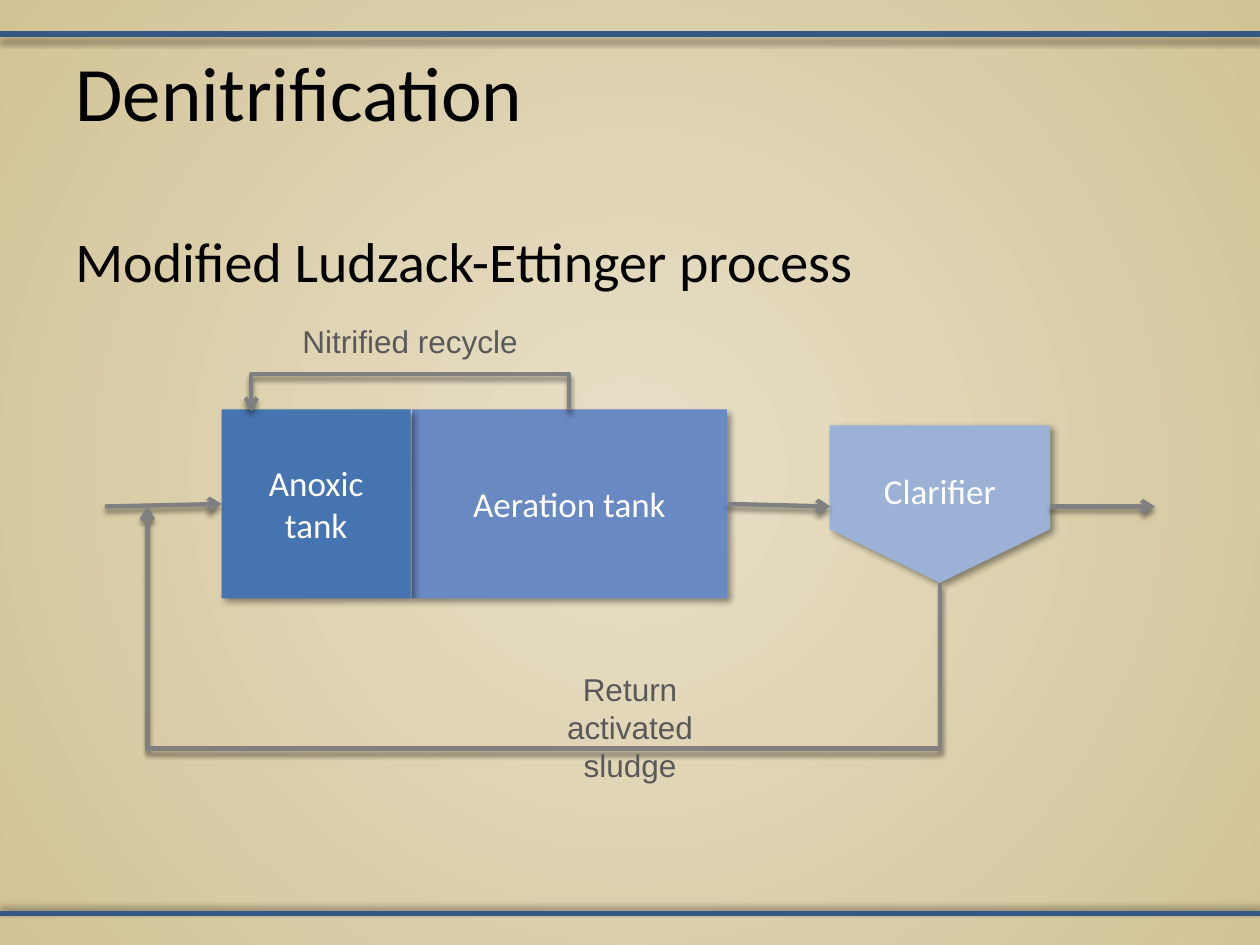
from lxml.etree import SubElement
from pptx import Presentation
from pptx.dml.color import RGBColor
from pptx.enum.shapes import MSO_CONNECTOR as CONN, MSO_SHAPE as SHAPE
from pptx.enum.text import MSO_ANCHOR, MSO_AUTO_SIZE, PP_ALIGN
from pptx.oxml.ns import qn
from pptx.util import Inches, Pt

BLACK = RGBColor(0x00, 0x00, 0x00)
WHITE = RGBColor(0xFF, 0xFF, 0xFF)
GREY = RGBColor(0x80, 0x80, 0x80)
LABEL = RGBColor(0x59, 0x59, 0x59)
RULE = RGBColor(0x35, 0x57, 0x84)
ANOXIC = RGBColor(0x46, 0x74, 0xB0)
AERATION = RGBColor(0x69, 0x89, 0xC2)
CLARIFIER = RGBColor(0x9B, 0xB1, 0xD6)
SAND = RGBColor(0xE8, 0xE0, 0xC8)
DARK_SAND = RGBColor(0xD2, 0xC3, 0x96)

prs = Presentation()
prs.slide_width, prs.slide_height = Inches(10), Inches(7.5)
W, H = prs.slide_width, prs.slide_height


def pct(*shares):
    """Turn alternating x and y percentages of the slide into lengths."""
    return [round(v * (H if i % 2 else W) / 100) for i, v in enumerate(shares)]


def add_shadow(sp, opacity, blur, dist, angle):
    """Append a black outer shadow; fill and line must be set already."""
    effects = SubElement(sp.element.spPr, qn("a:effectLst"))
    shadow = SubElement(effects, qn("a:outerShdw"), blurRad=str(Pt(blur)),
                        dist=str(Pt(dist)), dir=str(angle * 60000),
                        rotWithShape="0")
    color = SubElement(shadow, qn("a:srgbClr"), val="000000")
    SubElement(color, qn("a:alpha"), val=str(opacity * 1000))


s = prs.slides.add_slide(prs.slide_layouts[5])

# Radial background
fill = s.background.fill
fill.gradient()
for stop, color, position in zip(fill.gradient_stops, (SAND, DARK_SAND), (0, 1)):
    stop.color.rgb = color
    stop.position = position
grad = next(s.element.iter(qn("a:gradFill")))
grad.remove(grad.find(qn("a:lin")))
radial = SubElement(grad, qn("a:path"), path="circle")
SubElement(radial, qn("a:fillToRect"), l="50000", t="50000", r="50000", b="50000")

# Rules at the top and bottom
for y, angle in ((3.6, 90), (96.67, 270)):
    rule = s.shapes.add_connector(CONN.STRAIGHT, *pct(0, y, 100, y))
    rule.line.color.rgb = RULE
    rule.line.width = Pt(3)
    add_shadow(rule, 40, 4, 3, angle)

# Title and subtitle
title = s.shapes.title
subtitle = s.shapes.add_textbox(0, 0, 0, 0)
for sp, text, size, area in (
    (title, "Denitrification", 44, (5, 4, 90, 16.67)),
    (subtitle, "Modified Ludzack-Ettinger process", 32, (5, 23.33, 90, 12.27)),
):
    sp.left, sp.top, sp.width, sp.height = pct(*area)
    tf = sp.text_frame
    tf.text = text
    tf.word_wrap = True
    tf.vertical_anchor = MSO_ANCHOR.TOP
    p = tf.paragraphs[0]
    p.alignment = PP_ALIGN.LEFT
    p.font.name, p.font.size = "Calibri", Pt(size)
    p.font.color.rgb = BLACK

# Tanks; the clarifier is a pentagon turned to point down
for text, kind, color, area, turn in (
    ("Aeration tank", SHAPE.RECTANGLE, AERATION, (32.7, 43.33, 25, 20), 0),
    ("Anoxic tank", SHAPE.RECTANGLE, ANOXIC, (17.6, 43.33, 15, 20), 0),
    ("Clarifier", SHAPE.PENTAGON, CLARIFIER, (68.34, 41.67, 12.5, 23.33), 90),
):
    tank = s.shapes.add_shape(kind, *pct(*area))
    tank.fill.solid()
    tank.fill.fore_color.rgb = color
    tank.line.fill.background()
    add_shadow(tank, 40, 4, 3, 45)
    tf = tank.text_frame
    tf.text = text
    tf.word_wrap = True
    tf.vertical_anchor = MSO_ANCHOR.MIDDLE
    if turn:
        tank.rotation = turn
        tank.adjustments[0] = 0.34
        tank.element.txBody.find(qn("a:bodyPr")).set("vert", "vert270")
    p = tf.paragraphs[0]
    p.alignment = PP_ALIGN.CENTER
    p.font.name, p.font.size = "Calibri", Pt(20)
    p.font.color.rgb = WHITE

# Straight flows: inlet, aeration to clarifier, outlet
flows = [
    s.shapes.add_connector(CONN.STRAIGHT, *pct(*ends))
    for ends in ((8.33, 53.6, 17.6, 53.33),
                 (57.8, 53.33, 65.9, 53.6),
                 (83.33, 53.6, 91.67, 53.6))
]

# Return loops: sludge from the clarifier, nitrified recycle to the anoxic tank
for (x, y, w, h), turn, flips, bend in (
    ((40.1, 15.73, 6.1, 83.87), 90, ("flipH",), -2.15),
    ((32.5, 26.67, 0.1, 33.6), 270, ("flipH", "flipV"), -29),
):
    loop = s.shapes.add_connector(CONN.ELBOW, *pct(x, y, x + w, y + h))
    xfrm = loop.element.spPr.find(qn("a:xfrm"))
    xfrm.set("rot", str(turn * 60000))
    for flip in flips:
        xfrm.set(flip, "1")
    geom = loop.element.spPr.find(qn("a:prstGeom"))
    geom.set("prst", "bentConnector4")
    guides = geom.find(qn("a:avLst"))
    for name, share in (("adj1", bend), ("adj2", 1)):
        SubElement(guides, qn("a:gd"), name=name, fmla=f"val {round(share * 100000)}")
    flows.append(loop)

for flow in flows:
    flow.line.color.rgb = GREY
    flow.line.width = Pt(2.5)
    SubElement(flow.element.spPr.find(qn("a:ln")), qn("a:tailEnd"), type="arrow")
    add_shadow(flow, 45, 3, 2.4, 90)

# Loop labels
for text, area in (
    ("Return activated sludge", (44.4, 70.27, 11.2, 13.47)),
    ("Nitrified recycle", (21.7, 33.47, 21.7, 5.33)),
):
    label = s.shapes.add_textbox(*pct(*area))
    tf = label.text_frame
    tf.text = text
    tf.word_wrap = True
    tf.auto_size = MSO_AUTO_SIZE.SHAPE_TO_FIT_TEXT
    tf.margin_left = tf.margin_right = Inches(0.01)
    p = tf.paragraphs[0]
    p.alignment = PP_ALIGN.CENTER
    p.font.name, p.font.size = "Arial", Pt(18)
    p.font.color.rgb = LABEL

prs.save("out.pptx")
